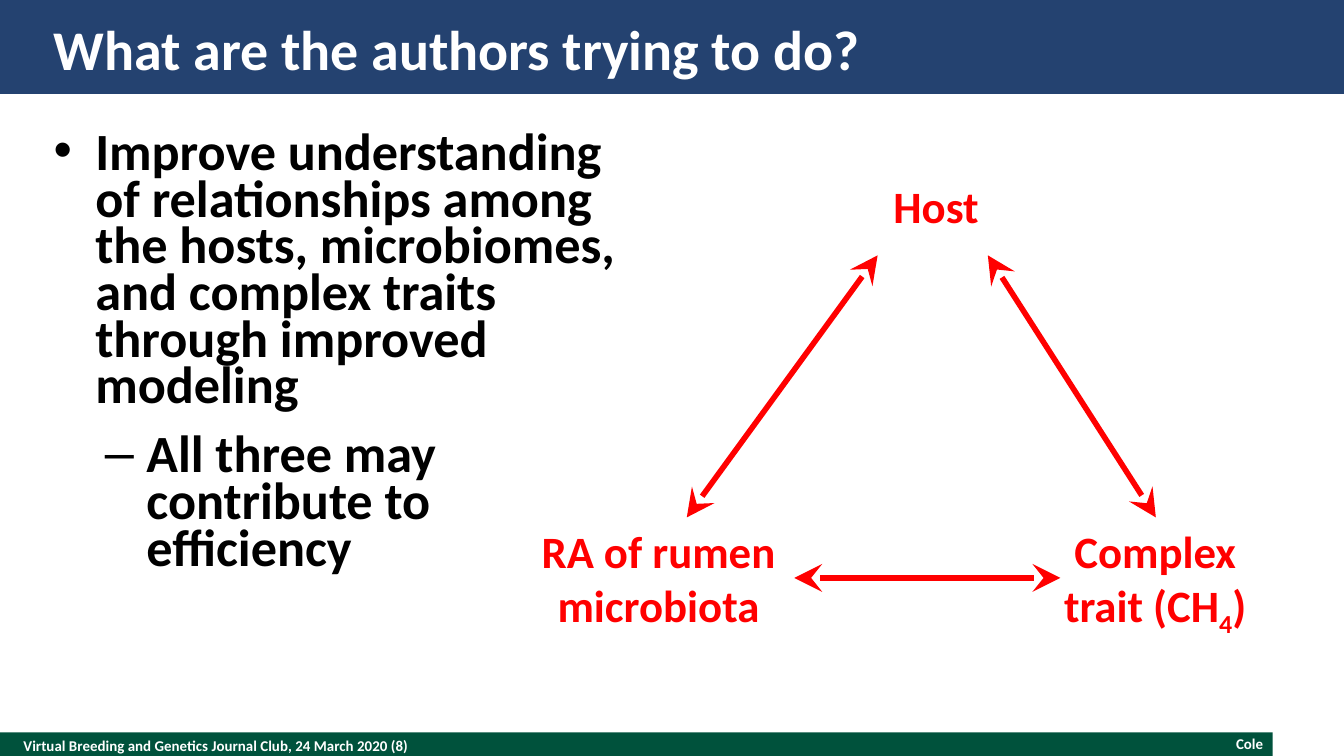
import pptx
import pptx.dml.color
import pptx.enum.shapes
import pptx.enum.text
import pptx.oxml.ns
import pptx.util
from lxml import etree

Inches = pptx.util.Inches
Pt = pptx.util.Pt
ALIGN = pptx.enum.text.PP_ALIGN
ANCHOR = pptx.enum.text.MSO_ANCHOR
qn = pptx.oxml.ns.qn

COLORS = {
    "green": "00523C",
    "navy": "244270",
    "white": "FFFFFF",
    "black": "000000",
    "red": "FF0000",
}
FONT = "Calibri"


def rgb(name):
    return pptx.dml.color.RGBColor.from_string(COLORS[name])


def add_band(page, left, top, width, height, color):
    band = page.shapes.add_shape(
        pptx.enum.shapes.MSO_SHAPE.RECTANGLE,
        Inches(left), Inches(top), Inches(width), Inches(height))
    band.shadow.inherit = False
    band.fill.solid()
    band.fill.fore_color.rgb = rgb(color)
    band.line.fill.background()


def set_frame(box, anchor=ANCHOR.TOP, inset=(0, 0)):
    """Set wrapping, anchor and (horizontal, vertical) insets."""
    frame = box.text_frame
    frame.word_wrap = True
    frame.auto_size = pptx.enum.text.MSO_AUTO_SIZE.NONE
    frame.vertical_anchor = anchor
    frame.margin_left = frame.margin_right = Inches(inset[0])
    frame.margin_top = frame.margin_bottom = Inches(inset[1])
    return frame


def add_box(page, left, top, width, height, **options):
    box = page.shapes.add_textbox(
        Inches(left), Inches(top), Inches(width), Inches(height))
    return set_frame(box, **options)


def write(para, text, size=24, color="black", align=ALIGN.LEFT, subscript=False):
    """Append bold text to a paragraph; a newline becomes a line break."""
    para.alignment = align
    for index, line in enumerate(text.split("\n")):
        if index:
            para.add_line_break()
        span = para.add_run()
        span.text = line
        span.font.name = FONT
        span.font.size = Pt(size)
        span.font.bold = True
        span.font.color.rgb = rgb(color)
        if subscript:
            span.font._element.set("baseline", "-25000")


def add_bullet(para, level, mark, indent):
    para.level = level
    properties = para._p.get_or_add_pPr()
    properties.set("marL", str(Inches(indent)))
    properties.set("indent", str(Inches(-0.31)))
    font = etree.SubElement(properties, qn("a:buFont"))
    font.set("typeface", "Arial")
    etree.SubElement(properties, qn("a:buChar")).set("char", mark)
    para.line_spacing = Pt(25)
    para.space_after = Pt(12)


def add_label(page, left, top, width, height, parts):
    """Add a centred red label made of (text, is subscript) parts."""
    frame = add_box(page, left, top, width, height, inset=(0.1, 0.05))
    for text, subscript in parts:
        write(frame.paragraphs[0], text, color="red", align=ALIGN.CENTER,
              subscript=subscript)


def add_double_arrow(page, start, end):
    arrow = page.shapes.add_connector(
        pptx.enum.shapes.MSO_CONNECTOR.STRAIGHT,
        *(Inches(value) for value in start + end))
    arrow.line.color.rgb = rgb("red")
    arrow.line.width = Pt(3)
    outline = arrow.line._get_or_add_ln()
    for tag in ("a:headEnd", "a:tailEnd"):
        tip = etree.SubElement(outline, qn(tag))
        for key, value in (("type", "stealth"), ("w", "lg"), ("len", "lg")):
            tip.set(key, value)
    etree.SubElement(arrow.element.spPr, qn("a:effectLst"))


def add_title(page, text):
    title = page.shapes.title
    title.left, title.top = Inches(0.4), Inches(0.1)
    title.width, title.height = Inches(9.2), Inches(0.52)
    frame = set_frame(title, anchor=ANCHOR.MIDDLE)
    write(frame.paragraphs[0], text, size=30, color="white")
    # Bring the title in front of the header band
    title.element.getparent().append(title.element)


def add_footer(page):
    left = add_box(page, 0.15, 5.45, 6.5, 0.2, anchor=ANCHOR.MIDDLE)
    write(left.paragraphs[0],
          " Virtual Breeding and Genetics Journal Club, 24 March 2020 (8)",
          size=8, color="white")
    right = add_box(page, 7.2, 5.47, 2.2, 0.13, anchor=ANCHOR.MIDDLE)
    write(right.paragraphs[0], "Cole", size=8, color="white", align=ALIGN.RIGHT)


def add_body(page):
    frame = add_box(page, 0.4, 1, 4.4, 4.2)
    items = [
        ("•", 0.31, "Improve understanding of relationships among the hosts, "
                    "microbiomes, and complex traits through improved modeling"),
        ("–", 0.69, "All three may contribute to efficiency"),
    ]
    for level, (mark, indent, text) in enumerate(items):
        para = frame.add_paragraph() if level else frame.paragraphs[0]
        add_bullet(para, level, mark, indent)
        write(para, text, size=28)


def add_triangle(page):
    add_label(page, 6.12, 1.28, 1.69, 0.5, [("Host", False)])
    add_label(page, 7.75, 3.85, 1.69, 0.91,
              [("Complex\ntrait (CH", False), ("4", True), (")", False)])
    add_label(page, 3.37, 3.85, 3.06, 0.91, [("RA of rumen microbiota", False)])
    for start, end in (((5.91, 4.3), (7.89, 4.3)),
                       ((5.11, 3.85), (6.53, 1.9)),
                       ((7.35, 1.9), (8.6, 3.85))):
        add_double_arrow(page, start, end)


def main():
    deck = pptx.Presentation()
    # Widescreen, 16:9
    deck.slide_width = Inches(10)
    deck.slide_height = Inches(10 * 9 / 16)
    page = deck.slides.add_slide(deck.slide_layouts[5])

    # Footer and header bands
    add_band(page, 0, 5.45, 9.47, 0.2, "green")
    add_band(page, 0, 0, 10, 0.7, "navy")
    add_footer(page)

    # Content
    add_title(page, "What are the authors trying to do?")
    add_body(page)
    add_triangle(page)
    deck.save("out.pptx")


if __name__ == "__main__":
    main()
